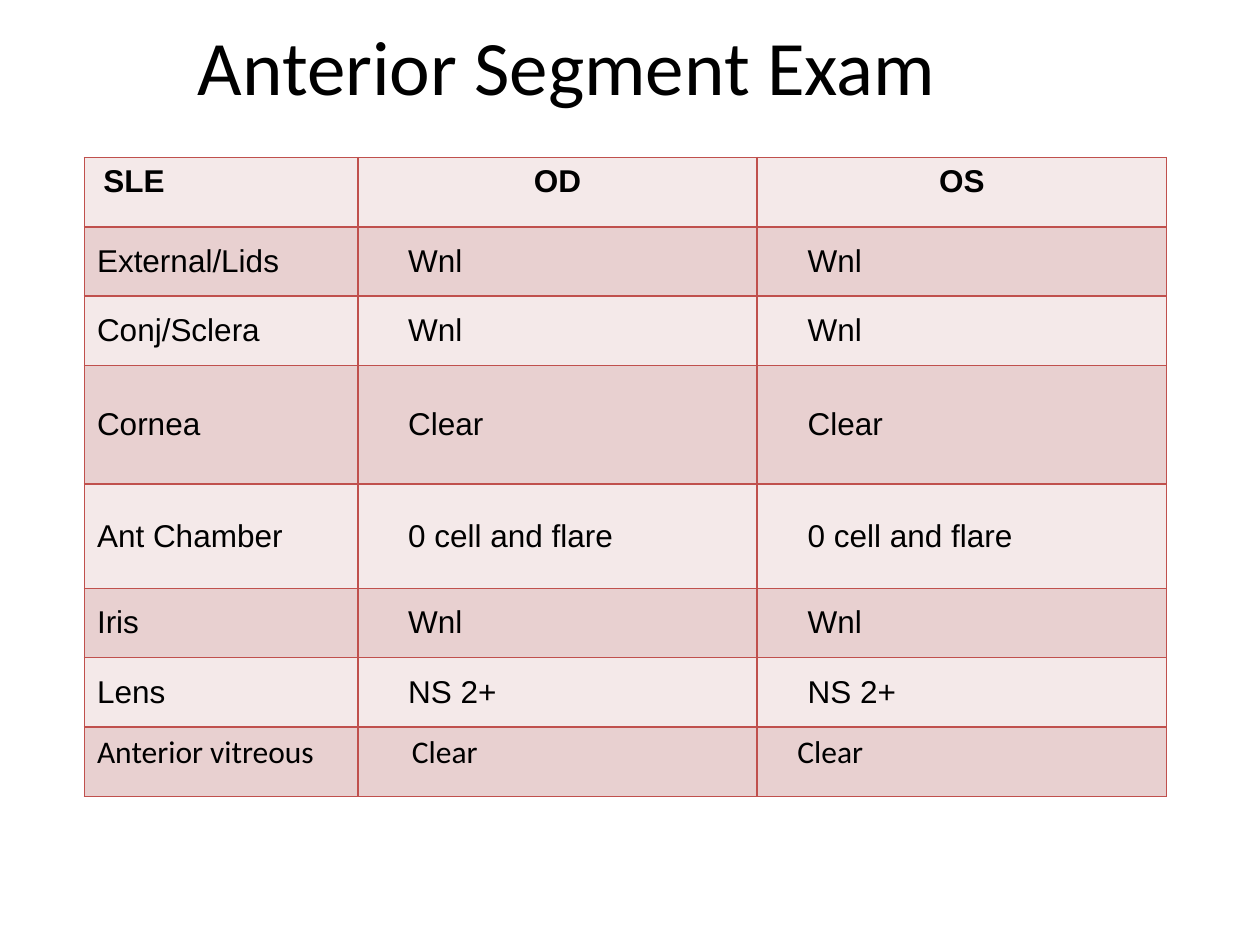
from dataclasses import dataclass

from lxml.etree import SubElement
from pptx import Presentation
from pptx.dml.color import RGBColor
from pptx.enum.text import MSO_ANCHOR as Anchor, PP_ALIGN as Align
from pptx.oxml.ns import qn
from pptx.util import Inches, Pt


@dataclass(frozen=True)
class Theme:
    text: str = "000000"
    border: str = "C0504D"
    bands: tuple = ("F4E9E9", "E8D0D0")
    title_font: str = "Calibri"
    body_font: str = "Arial"
    title_size: int = 44
    body_size: int = 18
    border_width: int = 1


THEME = Theme()

COLUMN_WIDTHS = (2.17, 3.17, 3.25)
FINDING_INSETS = (0.1, 0.4, 0.4)
HEADER = ("SLE", "OD", "OS")
# Structure, finding in both eyes, row height
FINDINGS = (
    ("External/Lids", "Wnl", 0.55),
    ("Conj/Sclera", "Wnl", 0.55),
    ("Cornea", "Clear", 0.94),
    ("Ant Chamber", "0 cell and flare", 0.83),
    ("Iris", "Wnl", 0.55),
    ("Lens", "NS 2+", 0.55),
)
VITREOUS = ("Anterior vitreous", "Clear", "Clear")
SHORT_ROW = 0.55


def format_text(paragraph, font_name, size, bold=False):
    for run in paragraph.runs:
        run.font.name = font_name
        run.font.size = Pt(size)
        run.font.bold = bold
        run.font.color.rgb = RGBColor.from_string(THEME.text)


def set_borders(cell):
    properties = cell._tc.get_or_add_tcPr()
    for index, side in enumerate(("a:lnL", "a:lnR", "a:lnT", "a:lnB")):
        line = properties.makeelement(qn(side), {"w": str(Pt(THEME.border_width))})
        fill = SubElement(line, qn("a:solidFill"))
        SubElement(fill, qn("a:srgbClr"), val=THEME.border)
        properties.insert(index, line)  # borders come before the fill


def fill_row(table, row, texts, insets, anchor=Anchor.TOP,
             font_name=THEME.body_font, bold=False, alignments=(Align.LEFT,) * 3):
    for column, text in enumerate(texts):
        cell = table.cell(row, column)
        cell.text_frame.text = text
        cell.margin_left = Inches(insets[column])
        cell.vertical_anchor = anchor
        cell.fill.solid()
        cell.fill.fore_color.rgb = RGBColor.from_string(THEME.bands[row % 2])
        set_borders(cell)
        paragraph = cell.text_frame.paragraphs[0]
        paragraph.alignment = alignments[column]
        format_text(paragraph, font_name, THEME.body_size, bold)


def place_title(slide, left, top, width, height):
    title = slide.shapes.title
    title.left, title.top = Inches(left), Inches(top)
    title.width, title.height = Inches(width), Inches(height)
    title.text_frame.text = "Anterior Segment Exam"
    title.text_frame.vertical_anchor = Anchor.MIDDLE
    paragraph = title.text_frame.paragraphs[0]
    paragraph.alignment = Align.CENTER
    format_text(paragraph, THEME.title_font, THEME.title_size)


def place_exam_table(slide, left, top, width, height):
    row_heights = [SHORT_ROW, *(finding[2] for finding in FINDINGS), SHORT_ROW]
    table = slide.shapes.add_table(
        len(row_heights), len(COLUMN_WIDTHS),
        Inches(left), Inches(top), Inches(width), Inches(height)).table
    for column, column_width in zip(table.columns, COLUMN_WIDTHS):
        column.width = Inches(column_width)
    for row, row_height in zip(table.rows, row_heights):
        row.height = Inches(row_height)

    # Header
    fill_row(table, 0, HEADER, (0.15, 0.1, 0.1), bold=True,
             alignments=(Align.LEFT, Align.CENTER, Align.CENTER))
    # Findings, the same for both eyes
    for row, (structure, finding, _) in enumerate(FINDINGS, start=1):
        fill_row(table, row, (structure, finding, finding), FINDING_INSETS,
                 anchor=Anchor.MIDDLE)
    # Vitreous
    fill_row(table, len(row_heights) - 1, VITREOUS, (0.1, 0.43, 0.32),
             font_name=THEME.title_font)


def main():
    presentation = Presentation()
    presentation.slide_width = Inches(10)
    presentation.slide_height = Inches(7.5)
    slide = presentation.slides.add_slide(presentation.slide_layouts[5])
    place_title(slide, 0, -0.11, 9, 1.25)
    place_exam_table(slide, 0.67, 1.25, 8.58, 5.06)
    presentation.save("out.pptx")


if __name__ == "__main__":
    main()
